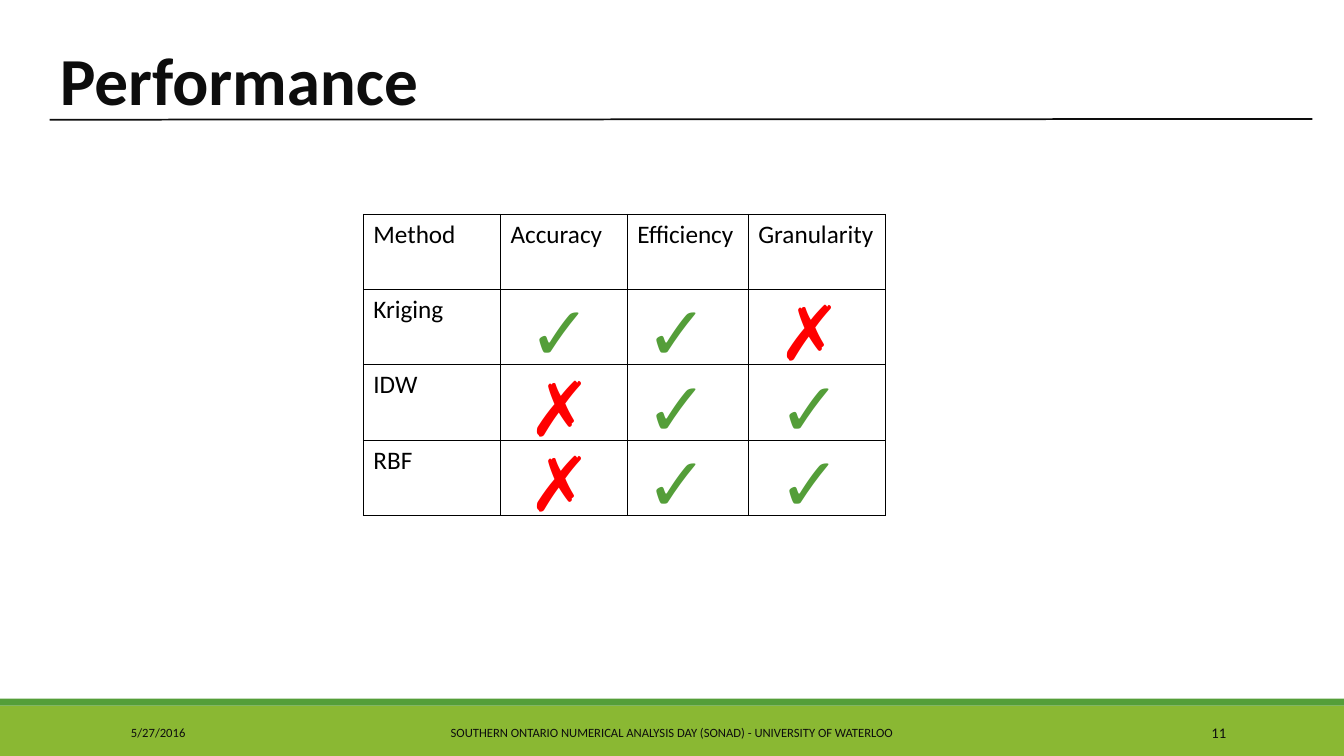
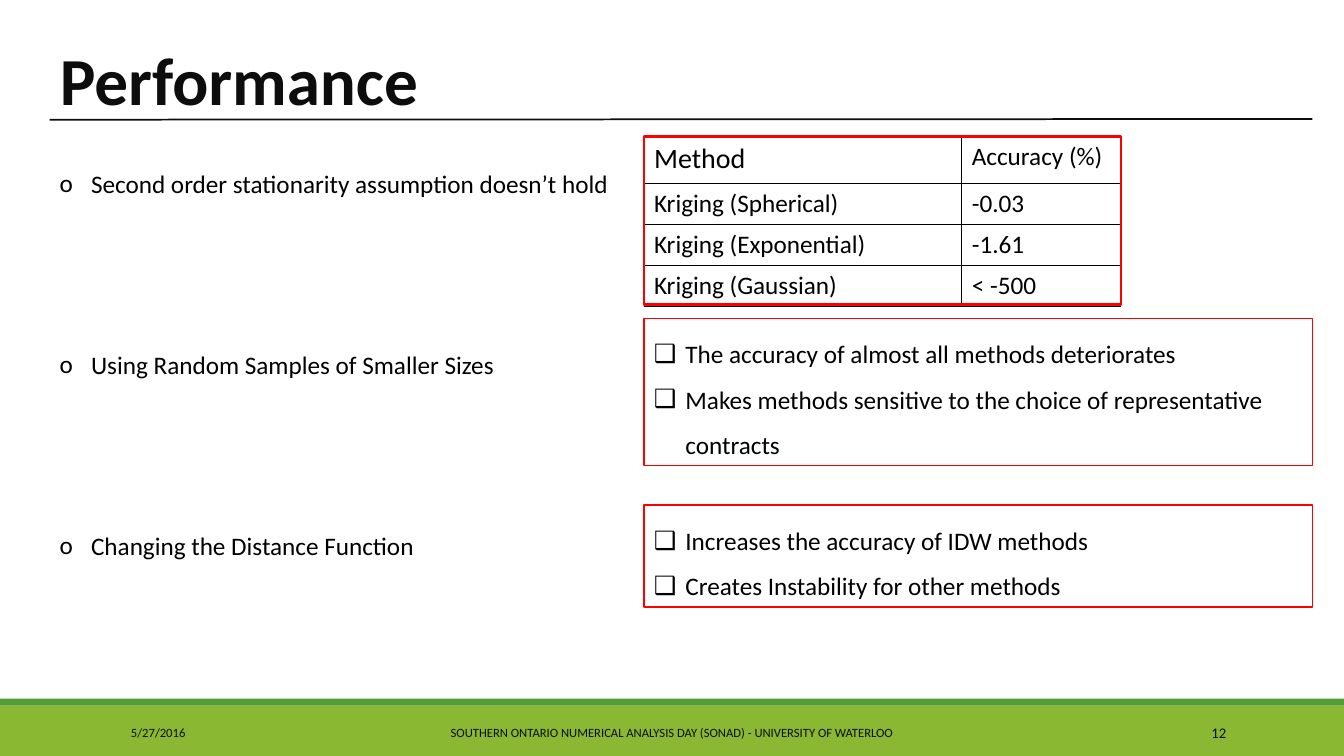
"""Build two slides on the performance of the methods."""
from dataclasses import dataclass

from lxml import etree
from pptx import Presentation
from pptx.dml.color import RGBColor
from pptx.enum.shapes import MSO_CONNECTOR, MSO_SHAPE
from pptx.enum.text import MSO_ANCHOR, MSO_AUTO_SIZE, PP_ALIGN
from pptx.oxml.ns import qn
from pptx.util import Pt

RECT = MSO_SHAPE.RECTANGLE
LINE = MSO_CONNECTOR.STRAIGHT
TOP, MIDDLE = MSO_ANCHOR.TOP, MSO_ANCHOR.MIDDLE
LEFT, CENTER, RIGHT = PP_ALIGN.LEFT, PP_ALIGN.CENTER, PP_ALIGN.RIGHT


@dataclass(frozen=True)
class Theme:
    """Colours, font and type sizes of the deck."""
    lime: str = "8AB833"
    green: str = "549E39"
    red: str = "FF0000"
    ink: str = "0D0D0D"
    black: str = "000000"
    white: str = "FFFFFF"
    font: str = "Calibri"
    title: float = 48
    mark: float = 54
    head: float = 20
    body: float = 18
    page: float = 10.5
    foot: float = 9


THEME = Theme()
WIDTH, HEIGHT = 960, 540
TITLE = "Performance"
DATE = "5/27/2016"
EVENT = "SOUTHERN ONTARIO NUMERICAL ANALYSIS DAY (SONAD) - UNIVERSITY OF WATERLOO"

BANDS = [((0, 504, WIDTH, 36), THEME.lime), ((0, 499, WIDTH, 5), THEME.green)]

SCORES = [
    ["Method", "Accuracy", "Efficiency", "Granularity"],
    ["Kriging", "", "", ""],
    ["IDW", "", "", ""],
    ["RBF", "", "", ""],
]
MARKS = ["✓✓✗", "✗✓✓", "✗✓✓"]
TINTS = {"✓": THEME.green, "✗": THEME.red}
MIDS = [400, 484, 578.5]

FITS = [
    ["Method", "Accuracy (%)"],
    ["Kriging (Spherical)", "-0.03"],
    ["Kriging (Exponential)", "-1.61"],
    ["Kriging (Gaussian)", "< -500"],
]
TOPICS = [
    "Second order stationarity assumption doesn’t hold",
    "Using Random Samples of Smaller Sizes",
    "Changing the Distance Function",
]
NOTES = [
    ((460, 227.5, 477.5, 105), [
        "The accuracy of almost all methods deteriorates",
        "Makes methods sensitive to the choice of representative contracts",
    ]),
    ((460, 361, 477.5, 72.5), [
        "Increases the accuracy of IDW methods",
        "Creates Instability for other methods",
    ]),
]


def color(code):
    """Turn a hex code into a colour."""
    return RGBColor.from_string(code)


def place(shape, box):
    """Move and size a shape."""
    shape.left, shape.top, shape.width, shape.height = map(Pt, box)


def write(frame, text, size=THEME.body, tint=THEME.black, bold=False,
          align=LEFT, anchor=TOP, bullet="", spacing=1.0, after=0):
    """Fill a text frame with one paragraph per line of text."""
    frame.word_wrap = True
    frame.vertical_anchor = anchor
    frame.text = text
    for para in frame.paragraphs:
        para.alignment = align
        para.line_spacing = spacing
        para.space_before, para.space_after = Pt(0), Pt(after)
        font = para.font
        for run in para.runs:
            font = run.font
        font.name, font.size, font.bold = THEME.font, Pt(size), bold
        font.color.rgb = color(tint)
        if bullet:
            props = para._p.get_or_add_pPr()
            props.set("marL", str(Pt(22.5)))
            props.set("indent", str(-Pt(22.5)))
            face = etree.SubElement(props, qn("a:buFont"))
            face.set("typeface", THEME.font)
            etree.SubElement(props, qn("a:buChar")).set("char", bullet)


def label(slide, box, text, **style):
    """Add a text box."""
    shape = slide.shapes.add_textbox(*map(Pt, box))
    write(shape.text_frame, text, **style)


def panel(slide, box, fill=None, edge=None, weight=1.25):
    """Add a flat rectangle."""
    shape = slide.shapes.add_shape(RECT, *map(Pt, box))
    shape.shadow.inherit = False
    if fill:
        shape.fill.solid()
        shape.fill.fore_color.rgb = color(fill)
    else:
        shape.fill.background()
    if edge:
        shape.line.color.rgb = color(edge)
        shape.line.width = Pt(weight)
    else:
        shape.line.fill.background()
    return shape


def border(cell):
    """Draw a thin black line on each side of a cell."""
    props = cell._tc.get_or_add_tcPr()
    for spot, side in enumerate(("lnL", "lnR", "lnT", "lnB")):
        edge = etree.Element(qn("a:" + side), w=str(Pt(0.75)))
        solid = etree.SubElement(edge, qn("a:solidFill"))
        etree.SubElement(solid, qn("a:srgbClr")).set("val", THEME.black)
        props.insert(spot, edge)


def grid(slide, left, top, cols, rows, data, first=THEME.body):
    """Add a plain ruled table; first is the size of its first cell."""
    spot = map(Pt, (left, top, sum(cols), sum(rows)))
    table = slide.shapes.add_table(len(rows), len(cols), *spot).table
    table.first_row = table.horz_banding = False
    for col, width in zip(table.columns, cols):
        col.width = Pt(width)
    for r, (height, line) in enumerate(zip(rows, data)):
        table.rows[r].height = Pt(height)
        for c, text in enumerate(line):
            cell = table.cell(r, c)
            cell.fill.background()
            border(cell)
            size = first if r == c == 0 else THEME.body
            write(cell.text_frame, text, size=size)


def start(deck, page):
    """Add a slide with its title, rule, bands and footer."""
    slide = deck.slides.add_slide(deck.slide_layouts[5])
    for box, fill in BANDS:
        panel(slide, box, fill)
    title = slide.shapes.title
    place(title, (35.5, 24, 880, 65.5))
    write(title.text_frame, TITLE, size=THEME.title, tint=THEME.ink, bold=True)
    title.text_frame.auto_size = MSO_AUTO_SIZE.NONE
    rule = slide.shapes.add_connector(LINE, *map(Pt, (35.5, 85.5, 937.5, 85)))
    rule.line.color.rgb = color(THEME.ink)
    rule.line.width = Pt(1.25)
    etree.SubElement(rule._element.spPr, qn("a:effectLst"))
    for left, width, text, align, size in (
        (86.5, 194.5, DATE, LEFT, THEME.foot),
        (290, 379.5, EVENT, CENTER, THEME.foot),
        (780, 103, str(page), RIGHT, THEME.page),
    ):
        label(slide, (left, 508.5, width, 29), text, size=size,
              tint=THEME.ink, align=align, anchor=MIDDLE)
    return slide


def score(deck):
    """Build the slide that compares the methods."""
    slide = start(deck, 11)
    grid(slide, 259.5, 153, [98, 90.5, 86.5, 98], [53.8] * 4, SCORES)
    for row, line in enumerate(MARKS):
        for mid, mark in zip(MIDS, line):
            label(slide, (mid - 33, 200 + 54 * row, 66, 73), mark,
                  size=THEME.mark, tint=TINTS[mark], align=CENTER)


def detail(deck):
    """Build the slide that explains the results."""
    slide = start(deck, 12)
    grid(slide, 460, 97.5, [227, 113.5], [33.7] + [29.3] * 3, FITS, THEME.head)
    panel(slide, (460, 97.5, 340.5, 120), edge=THEME.red, weight=1.5)
    label(slide, (35.5, 106, 440, 301.5), "\n".join(TOPICS),
          bullet="o", spacing=1.5, after=97)
    for box, lines in NOTES:
        shape = panel(slide, box, THEME.white, THEME.red)
        write(shape.text_frame, "\n".join(lines), bullet="❑", spacing=1.5)


def main():
    """Build and save the deck."""
    deck = Presentation()
    deck.slide_width, deck.slide_height = Pt(WIDTH), Pt(HEIGHT)
    score(deck)
    detail(deck)
    deck.save("out.pptx")


if __name__ == "__main__":
    main()
